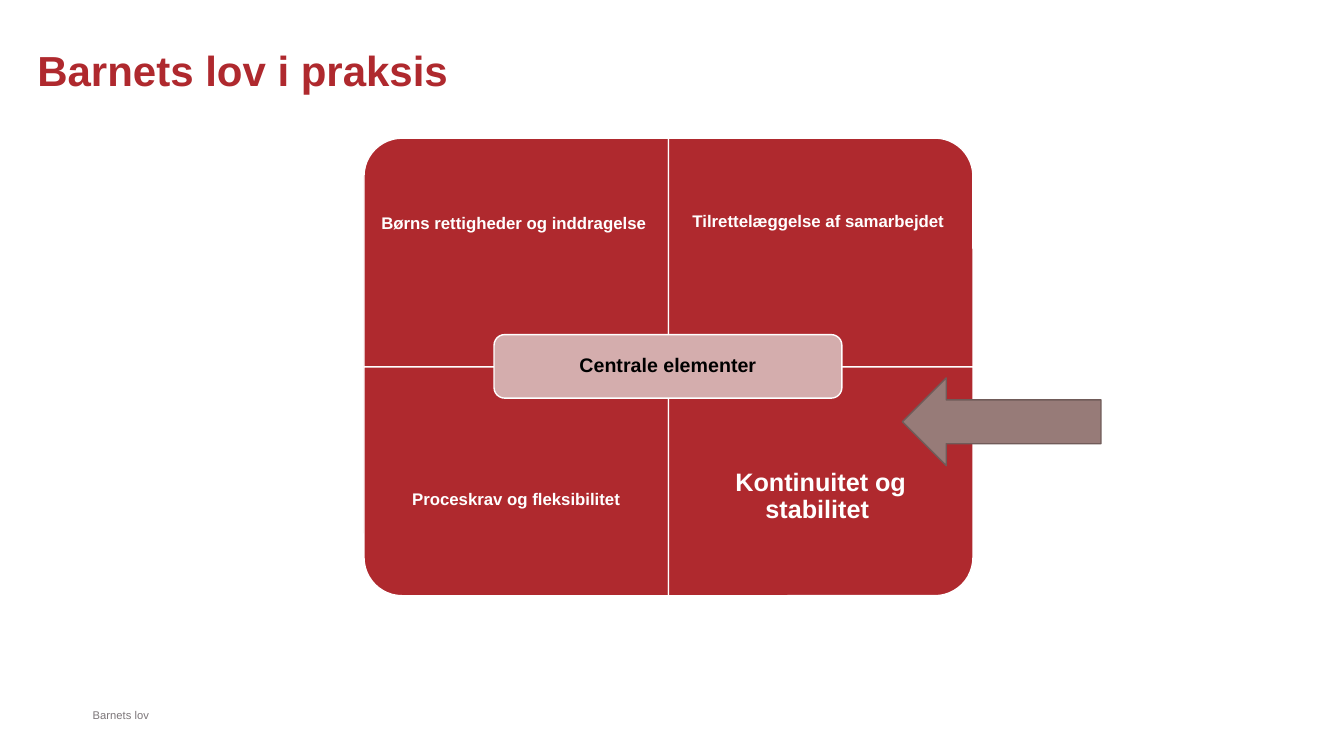
from pptx import Presentation
from pptx.dml.color import RGBColor
from pptx.enum.shapes import MSO_SHAPE
from pptx.enum.text import MSO_ANCHOR, PP_ALIGN
from pptx.util import Inches, Pt

QUARTER = MSO_SHAPE.ROUND_1_RECTANGLE
ROUNDED = MSO_SHAPE.ROUNDED_RECTANGLE
ARROW = MSO_SHAPE.LEFT_ARROW
TOP, MIDDLE, BOTTOM = MSO_ANCHOR.TOP, MSO_ANCHOR.MIDDLE, MSO_ANCHOR.BOTTOM
LEFT, CENTER = PP_ALIGN.LEFT, PP_ALIGN.CENTER

RED = RGBColor(0xAF, 0x29, 0x2E)
PINK = RGBColor(0xD4, 0xAD, 0xAD)
BROWN = RGBColor(0x97, 0x7B, 0x78)
DARK_BROWN = RGBColor(0x70, 0x5B, 0x59)
GREY = RGBColor(0x7C, 0x76, 0x79)
WHITE = RGBColor(0xFF, 0xFF, 0xFF)
BLACK = RGBColor(0x00, 0x00, 0x00)

MATRIX_LEFT, MATRIX_TOP = 3.61, 1.37
CELL_WIDTH, CELL_HEIGHT = 3.02, 2.27
LABEL_HEIGHT = 1.7

QUADRANTS = [
    (0, 0, 270, "Børns rettigheder og inddragelse ", 12, 0.09, 1.37),
    (1, 0, 0, "Tilrettelæggelse af samarbejdet ", 12, 0.09, 1.35),
    (0, 1, 180, "Proceskrav og fleksibilitet", 12, 0.09, 4.11),
    (1, 1, 90, "Kontinuitet og stabilitet ", 18, 0.14, 4.08),
]


def add_block(slide, kind, left, top, width, height, fill, line, rotation=0):
    shape = slide.shapes.add_shape(
        kind, Inches(left), Inches(top), Inches(width), Inches(height))
    shape.rotation = rotation
    shape.shadow.inherit = False
    shape.fill.solid()
    shape.fill.fore_color.rgb = fill
    shape.line.color.rgb = line
    shape.line.width = Pt(1)
    return shape


def write_text(shape, text, size, color, bold=True, align=CENTER,
               anchor=MIDDLE, inset=0.0):
    frame = shape.text_frame
    frame.word_wrap = True
    frame.vertical_anchor = anchor
    frame.margin_left = frame.margin_right = Inches(inset)
    frame.margin_top = frame.margin_bottom = Inches(inset)
    paragraph = frame.paragraphs[0]
    paragraph.alignment = align
    paragraph.line_spacing = 0.9
    run = paragraph.add_run()
    run.text = text
    run.font.name = "Arial"
    run.font.size = Pt(size)
    run.font.bold = bold
    run.font.color.rgb = color


def add_label(slide, left, top, width, height, *text, **style):
    box = slide.shapes.add_textbox(
        Inches(left), Inches(top), Inches(width), Inches(height))
    write_text(box, *text, **style)


def add_quadrant(slide, column, row, rotation, text, size, inset, label_top):
    left = MATRIX_LEFT + column * CELL_WIDTH
    top = MATRIX_TOP + row * CELL_HEIGHT
    width, height = CELL_WIDTH, CELL_HEIGHT
    if rotation in (90, 270):
        width, height = height, width
    add_block(slide, QUARTER, left + (CELL_WIDTH - width) / 2,
              top + (CELL_HEIGHT - height) / 2, width, height,
              RED, WHITE, rotation)
    add_label(slide, left, label_top, CELL_WIDTH, LABEL_HEIGHT,
              text, size, WHITE, inset=inset)


def main():
    presentation = Presentation()
    presentation.slide_width = Inches(13.33)
    presentation.slide_height = Inches(7.5)
    slide = presentation.slides.add_slide(presentation.slide_layouts[6])

    add_label(slide, 0.37, 0.5, 7.09, 0.67, "Barnets lov i praksis", 30, RED,
              align=LEFT, anchor=TOP)
    for quadrant in QUADRANTS:
        add_quadrant(slide, *quadrant)
    center = add_block(slide, ROUNDED, 4.9, 3.32, 3.45, 0.63, PINK, WHITE)
    write_text(center, "Centrale elementer", 14, BLACK, inset=0.06)
    add_label(slide, 0.92, 6.96, 5.24, 0.2, "Barnets lov", 8, GREY,
              bold=False, align=LEFT, anchor=BOTTOM)
    add_block(slide, ARROW, 8.95, 3.75, 1.97, 0.87, BROWN, DARK_BROWN)

    presentation.save("out.pptx")


if __name__ == "__main__":
    main()
